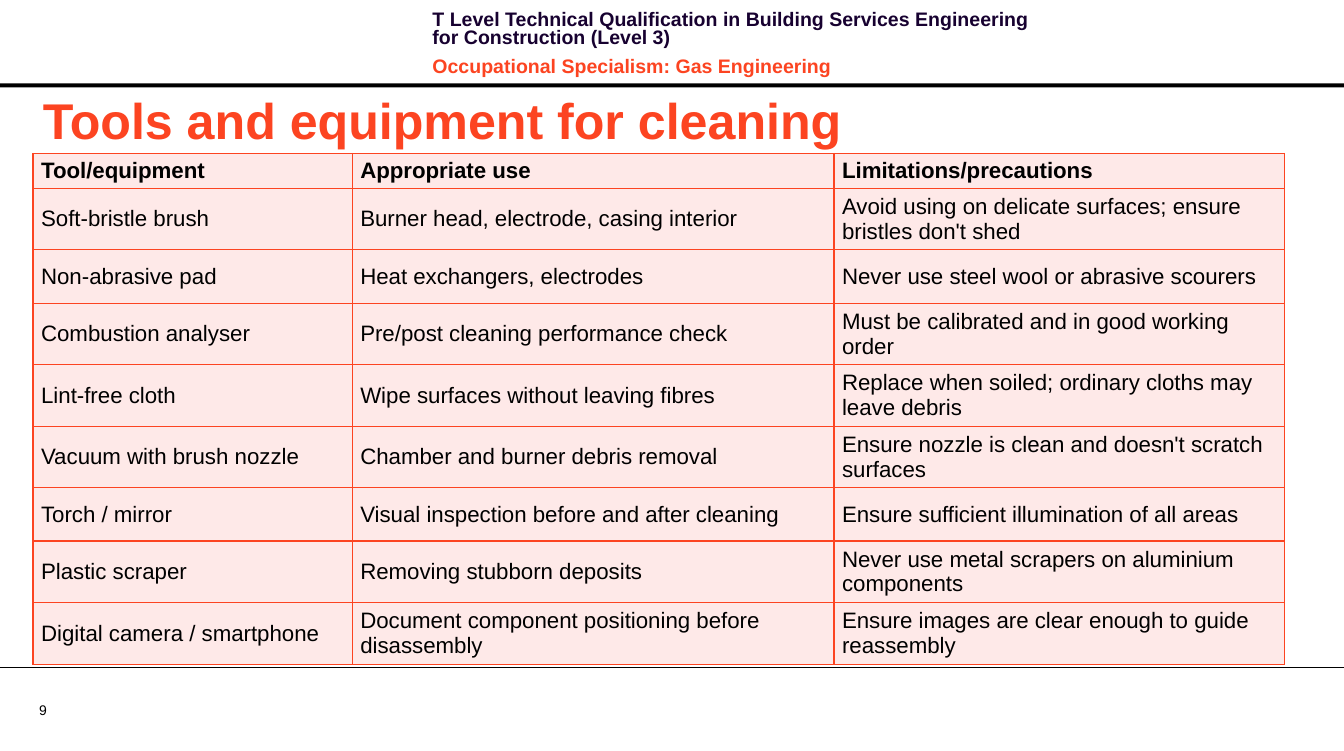
import pptx
import pptx.dml.color
import pptx.enum.shapes
import pptx.enum.text
import pptx.oxml.ns
import pptx.util
from lxml import etree

THEME = {
    "font": "Arial",
    "accent": "FC4421", "navy": "170130", "ink": "000000", "cell": "FEE9E8",
    "title": 36, "table": 16, "banner": 14, "number": 10,
}
MIDDLE = pptx.enum.text.MSO_ANCHOR.MIDDLE

deck = pptx.Presentation()
deck.slide_width = pptx.util.Inches(13.39)
deck.slide_height = pptx.util.Inches(7.48)
slide = deck.slides.add_slide(deck.slide_layouts[6])


def share(left, top, width, height):
    """Turn percentages of the slide's width and height into lengths."""
    sides = (deck.slide_width, deck.slide_height) * 2
    return [round(side * part / 100) for side, part in zip(sides, (left, top, width, height))]


def write(frame, lines, size, bold=True):
    """Fill a text frame with (text, colour name) lines."""
    frame.word_wrap = True
    frame.text = "\n".join(text for text, _ in lines)
    for paragraph, (_, colour) in zip(frame.paragraphs, lines):
        font = paragraph.runs[0].font
        font.name, font.size, font.bold = THEME["font"], pptx.util.Pt(THEME[size]), bold
        font.color.rgb = pptx.dml.color.RGBColor.from_string(THEME[colour])


# Header and footer
ink = pptx.dml.color.RGBColor.from_string(THEME["ink"])
header_rule = slide.shapes.add_shape(
    pptx.enum.shapes.MSO_SHAPE.RECTANGLE, *share(0, 11.1, 100, 0.53))
header_rule.shadow.inherit = False
header_rule.fill.solid()
header_rule.fill.fore_color.rgb = ink
header_rule.line.fill.background()

page_number = slide.shapes.add_textbox(*share(2.91, 93.45, 4.78, 2.27)).text_frame
write(page_number, [("9", "ink")], "number", bold=False)
page_number.vertical_anchor = MIDDLE
page_number.margin_left = page_number.margin_right = 0
page_number.margin_top = page_number.margin_bottom = 0

left, footer_y, right, _ = share(0, 88.9, 100, 0)
footer_rule = slide.shapes.add_connector(
    pptx.enum.shapes.MSO_CONNECTOR.STRAIGHT, left, footer_y, right, footer_y)
footer_rule.line.color.rgb = ink
footer_rule.line.width = pptx.util.Pt(0.75)
etree.SubElement(footer_rule._element.spPr, pptx.oxml.ns.qn("a:effectLst"))

banner = slide.shapes.add_textbox(*share(31.44, 0.94, 47.57, 8.56)).text_frame
write(banner, [
    ("T Level Technical Qualification in Building Services Engineering "
     "for Construction (Level 3)", "navy"),
    ("Occupational Specialism: Gas Engineering", "accent"),
], "banner")
for paragraph in banner.paragraphs:
    paragraph.line_spacing = pptx.util.Pt(13.1)
    paragraph.space_after = pptx.util.Pt(4)
banner.paragraphs[1].space_before = pptx.util.Pt(4)

title = slide.shapes.add_textbox(*share(2.46, 11.1, 95, 9.49)).text_frame
write(title, [("Tools and equipment for cleaning", "accent")], "title")
title.vertical_anchor = MIDDLE

# Table of tools
TOOLS = [
    ("Tool/equipment", "Appropriate use", "Limitations/precautions"),
    ("Soft-bristle brush", "Burner head, electrode, casing interior",
     "Avoid using on delicate surfaces; ensure bristles don't shed"),
    ("Non-abrasive pad", "Heat exchangers, electrodes",
     "Never use steel wool or abrasive scourers"),
    ("Combustion analyser", "Pre/post cleaning performance check",
     "Must be calibrated and in good working order"),
    ("Lint-free cloth", "Wipe surfaces without leaving fibres",
     "Replace when soiled; ordinary cloths may leave debris"),
    ("Vacuum with brush nozzle", "Chamber and burner debris removal",
     "Ensure nozzle is clean and doesn't scratch surfaces"),
    ("Torch / mirror", "Visual inspection before and after cleaning",
     "Ensure sufficient illumination of all areas"),
    ("Plastic scraper", "Removing stubborn deposits",
     "Never use metal scrapers on aluminium components"),
    ("Digital camera / smartphone", "Document component positioning before disassembly",
     "Ensure images are clear enough to guide reassembly"),
]
COLUMN_SHARES = (23.75, 35.85, 33.53)
HEADING_ROW, TOOL_ROW = 4.01, 7.09

table_height = HEADING_ROW + TOOL_ROW * (len(TOOLS) - 1)
table = slide.shapes.add_table(
    len(TOOLS), len(COLUMN_SHARES),
    *share(2.46, 20.45, sum(COLUMN_SHARES), table_height)).table
table.first_row = table.horz_banding = False
for column, width in zip(table.columns, COLUMN_SHARES):
    column.width = share(0, 0, width, 0)[2]

for row_index, tool in enumerate(TOOLS):
    is_heading = row_index == 0
    table.rows[row_index].height = share(0, 0, 0, HEADING_ROW if is_heading else TOOL_ROW)[3]
    for column_index, text in enumerate(tool):
        cell = table.cell(row_index, column_index)
        write(cell.text_frame, [(text, "ink")], "table", bold=is_heading)
        cell.vertical_anchor = MIDDLE
        cell.margin_left = cell.margin_right = pptx.util.Inches(0.08)
        cell.margin_top = cell.margin_bottom = pptx.util.Inches(0.04)
        properties = cell._tc.get_or_add_tcPr()
        for side in ("lnL", "lnR", "lnT", "lnB"):
            border = etree.SubElement(
                properties, pptx.oxml.ns.qn(f"a:{side}"), w=str(pptx.util.Pt(1)))
            paint = etree.SubElement(border, pptx.oxml.ns.qn("a:solidFill"))
            etree.SubElement(paint, pptx.oxml.ns.qn("a:srgbClr"), val=THEME["accent"])
        cell.fill.solid()
        cell.fill.fore_color.rgb = pptx.dml.color.RGBColor.from_string(THEME["cell"])

deck.save("out.pptx")
